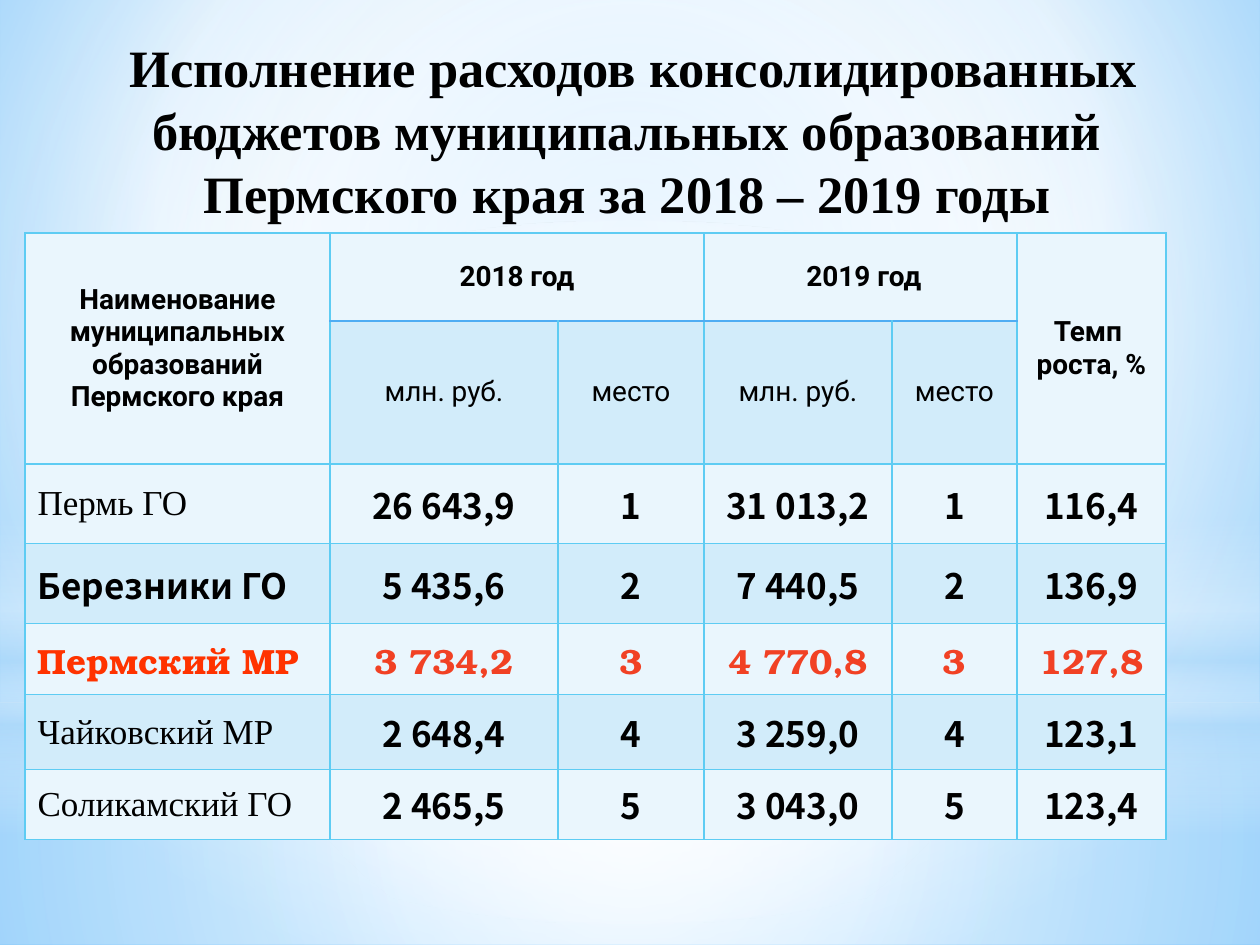
from lxml.etree import SubElement
from pptx import Presentation
from pptx.dml.color import RGBColor
from pptx.enum.shapes import MSO_SHAPE
from pptx.enum.text import MSO_ANCHOR, MSO_AUTO_SIZE, PP_ALIGN
from pptx.oxml.ns import qn
from pptx.util import Pt

PX = 914400 // 126
COLORS = {
    "text": "000000", "red": "FF3300", "figure_red": "F14124",
    "light": "EAF6FD", "band": "D2ECFA", "border": "5ECCF3", "divider": "4FADF3",
    "white": "FFFFFF", "haze": "B4DCFA", "sky": "9ED5FF", "deep": "5BB9FF",
}
SERIF, HEADING, SANS, SLAB = "Times New Roman", "Roboto", "Noto Sans CJK KR", "TeX Gyre Bonum"
COLUMNS = [305, 228, 146, 188, 125, 149]
ROWS = [88, 142, 80, 80, 71, 75, 70]
HEADERS = [
    (0, 0, 1, 0, "Наименование муниципальных образований Пермского края"),
    (0, 1, 0, 2, "2018 год"),
    (0, 3, 0, 4, " 2019 год"),
    (0, 5, 1, 5, "Темп \nроста, %"),
]
SUBHEADERS = ["млн. руб.", "место"] * 2
BUDGETS = [
    ("Пермь ГО", "26 643,9", "1", "31 013,2", "1", "116,4"),
    ("Березники ГО", "5 435,6", "2", "7 440,5", "2", "136,9"),
    ("Пермский МР", "3 734,2", "3", "4 770,8", "3", "127,8"),
    ("Чайковский МР", "2 648,4", "4", "3 259,0", "4", "123,1"),
    ("Соликамский ГО", "2 465,5", "5", "3 043,0", "5", "123,4"),
]
NAME_STYLES = {"Березники ГО": (SANS, "text", True), "Пермский МР": (SLAB, "red", True)}
GLOWS = [
    (MSO_SHAPE.RECTANGLE, (0, 703, 1260, 242), True,
     [(0, "white", 91), (37, "white", 76), (100, "haze", 79)]),
    (MSO_SHAPE.RECTANGLE, (0, 0, 1260, 703), True,
     [(0, "white", 89), (48, "white", 62), (100, "haze", 79)]),
    (MSO_SHAPE.RECTANGLE, (0, 519, 1260, 315), False,
     [(0, "white", 0), (29, "white", 30), (45, "haze", 40),
      (55, "white", 26), (65, "haze", 60), (100, "white", 0)]),
    (MSO_SHAPE.OVAL, (0, 221, 1260, 703), True, [(0, "white", 100), (56, "white", 0)]),
]


def scaled(box):
    """Turn a box of px into EMU."""
    return [length * PX for length in box]


def paint_gradient(owner, stops, center):
    """Rewrite the owner's gradient as a circle around center, or as vertical without one."""
    gradient = owner.find(".//" + qn("a:gradFill"))
    for child in list(gradient):
        gradient.remove(child)
    stop_list = SubElement(gradient, qn("a:gsLst"))
    for position, color, opacity in stops:
        stop = SubElement(stop_list, qn("a:gs"), pos=str(position * 1000))
        paint = SubElement(stop, qn("a:srgbClr"), val=COLORS[color])
        SubElement(paint, qn("a:alpha"), val=str(opacity * 1000))
    if center:
        circle = SubElement(gradient, qn("a:path"), path="circle")
        sides = {side: str(share * 1000) for side, share in zip("ltrb", center)}
        SubElement(circle, qn("a:fillToRect"), **sides)
    else:
        SubElement(gradient, qn("a:lin"), ang="5400000", scaled="0")


def add_backdrop(page):
    """Paint the sky background and its soft glows."""
    page.background.fill.gradient()
    sky = [(0, "sky", 100), (60, "white", 100), (100, "deep", 100)]
    paint_gradient(page._element, sky, (20, 10, 20, 60))
    for kind, box, is_circle, stops in GLOWS:
        glow = page.shapes.add_shape(kind, *scaled(box))
        glow.shadow.inherit = False
        glow.line.fill.background()
        glow.fill.gradient()
        paint_gradient(glow._element, stops, (50, 50, 50, 50) if is_circle else None)


def format_text(frame, font, size, color="text", bold=False, align=PP_ALIGN.CENTER):
    """Format every paragraph and run of a text frame."""
    for para in frame.paragraphs:
        para.alignment = align
        for span in para.runs:
            span.font.name, span.font.size, span.font.bold = font, Pt(size), bold
            span.font.color.rgb = RGBColor.from_string(COLORS[color])


def add_title(page, box):
    """Place the title placeholder in front of the backdrop."""
    title = page.shapes.title
    title.left, title.top, title.width, title.height = scaled(box)
    frame = title.text_frame
    frame.text = (" Исполнение расходов консолидированных бюджетов муниципальных "
                  "образований Пермского края за 2018 – 2019 годы")
    frame.word_wrap = True
    frame.auto_size = MSO_AUTO_SIZE.NONE
    frame.vertical_anchor = MSO_ANCHOR.MIDDLE
    format_text(frame, SERIF, 30, bold=True)
    page.shapes._spTree.append(title._element)


def style_cell(cell, fill, divider_side=None):
    """Give a cell its borders, fill and middle anchor."""
    properties = cell._tc.get_or_add_tcPr()
    for side in "LRTB":
        line = SubElement(properties, qn(f"a:ln{side}"), w=str(Pt(1)))
        paint = SubElement(line, qn("a:solidFill"))
        color = "divider" if side == divider_side else "border"
        SubElement(paint, qn("a:srgbClr"), val=COLORS[color])
    cell.fill.solid()
    cell.fill.fore_color.rgb = RGBColor.from_string(COLORS[fill])
    cell.vertical_anchor = MSO_ANCHOR.MIDDLE


def add_budget_table(page, left, top):
    """Build the table of spending by municipality."""
    box = scaled((left, top, sum(COLUMNS), sum(ROWS)))
    table = page.shapes.add_table(len(ROWS), len(COLUMNS), *box).table
    table.first_row = table.horz_banding = False
    for column, width in zip(table.columns, COLUMNS):
        column.width = width * PX
    for row, height in zip(table.rows, ROWS):
        row.height = height * PX
    for row in range(len(ROWS)):
        for column in range(len(COLUMNS)):
            inner = 0 < column < len(COLUMNS) - 1
            is_band = row % 2 and (row > 1 or inner)
            divider_side = {0: "B", 1: "T"}.get(row) if inner else None
            style_cell(table.cell(row, column), "band" if is_band else "light", divider_side)
    for row, column, last_row, last_column, text in HEADERS:
        cell = table.cell(row, column)
        cell.merge(table.cell(last_row, last_column))
        cell.text_frame.text = text
        format_text(cell.text_frame, HEADING, 16, bold=True)
    for column, text in enumerate(SUBHEADERS, 1):
        frame = table.cell(1, column).text_frame
        frame.text = text
        format_text(frame, HEADING, 16)
    for row, (name, *figures) in enumerate(BUDGETS, 2):
        frame = table.cell(row, 0).text_frame
        frame.text = name
        font, color, bold = NAME_STYLES.get(name, (SERIF, "text", False))
        format_text(frame, font, 20, color, bold, PP_ALIGN.LEFT)
        is_red = color == "red"
        for column, figure in enumerate(figures, 1):
            frame = table.cell(row, column).text_frame
            frame.text = figure
            format_text(frame, SLAB if is_red else SANS, 20,
                        "figure_red" if is_red else "text", True)


def main():
    """Build and save the deck."""
    deck = Presentation()
    deck.slide_width, deck.slide_height = scaled((1260, 945))
    page = deck.slides.add_slide(deck.slide_layouts[5])
    add_backdrop(page)
    add_budget_table(page, 25, 233)
    add_title(page, (60, 37, 1134, 186))
    deck.save("out.pptx")


if __name__ == "__main__":
    main()
